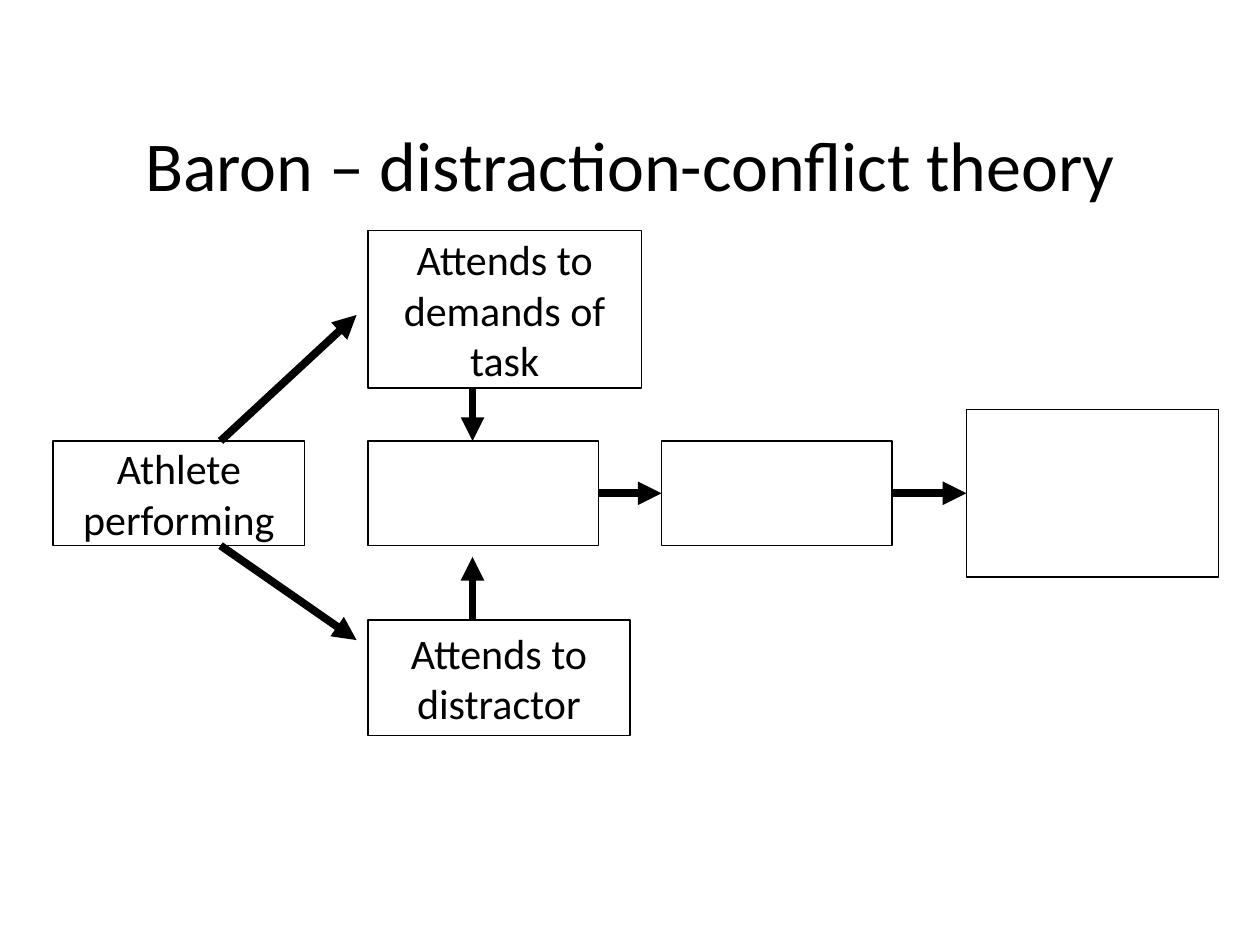
from dataclasses import dataclass

from lxml.etree import SubElement
from pptx import Presentation
from pptx.dml.color import RGBColor
from pptx.enum.shapes import MSO_CONNECTOR, MSO_SHAPE
from pptx.enum.text import MSO_ANCHOR, PP_ALIGN
from pptx.oxml.ns import qn
from pptx.util import Inches, Pt


@dataclass(frozen=True)
class Theme:
    font: str = "Calibri"
    ink: RGBColor = RGBColor(0, 0, 0)
    paper: RGBColor = RGBColor(255, 255, 255)
    title: int = 40
    body: int = 24
    outline: float = 0.75
    arrow: float = 4.5


THEME = Theme()
TOP, LEFT, BOTTOM, RIGHT = range(4)

# name: (left, top, width, height, text), relative to the diagram
BOXES = {
    "outcome": (7.25, 1.42, 2, 1.33, ""),
    "effect": (4.83, 1.67, 1.83, 0.83, ""),
    "conflict": (2.5, 1.67, 1.83, 0.83, ""),
    "athlete": (0, 1.67, 2, 0.83, "Athlete performing"),
    "task": (2.5, 0, 2.17, 1.25, "Attends to demands of task"),
    "distractor": (2.5, 3.09, 2.08, 0.92, "Attends to distractor"),
}
# Arrows that do not meet the middle of a side: x1, y1, x2, y2
FREE_ARROWS = [
    (1.33, 1.67, 2.41, 0.67),
    (3.33, 1.25, 3.33, 1.67),
    (1.33, 2.5, 2.41, 3.25),
    (3.33, 3.09, 3.33, 2.59),
]
FLOW = ["conflict", "effect", "outcome"]


def write(tf, text, size):
    tf.text = text
    tf.word_wrap = True
    tf.vertical_anchor = MSO_ANCHOR.MIDDLE
    p = tf.paragraphs[0]
    p.alignment = PP_ALIGN.CENTER
    for r in p.runs:
        r.font.name = THEME.font
        r.font.size = Pt(size)
        r.font.color.rgb = THEME.ink


def add_title(s, left, top, width, height):
    title = s.shapes.title
    title.left, title.top = Inches(left), Inches(top)
    title.width, title.height = Inches(width), Inches(height)
    write(title.text_frame, "Baron – distraction-conflict theory", THEME.title)


def add_box(s, left, top, width, height, text):
    sp = s.shapes.add_shape(MSO_SHAPE.RECTANGLE, Inches(left), Inches(top),
                            Inches(width), Inches(height))
    sp.shadow.inherit = False
    sp.line.color.rgb = THEME.ink
    sp.line.width = Pt(THEME.outline)
    if text:
        sp.fill.background()
        write(sp.text_frame, text, THEME.body)
    else:
        sp.fill.solid()
        sp.fill.fore_color.rgb = THEME.paper
    return sp


def add_arrow(s, x1=0, y1=0, x2=0, y2=0):
    line = s.shapes.add_connector(MSO_CONNECTOR.STRAIGHT, Inches(x1), Inches(y1),
                                  Inches(x2), Inches(y2))
    line.line.color.rgb = THEME.ink
    line.line.width = Pt(THEME.arrow)
    SubElement(line.line._get_or_add_ln(), qn("a:tailEnd"), type="triangle")
    SubElement(line._element.spPr, qn("a:effectLst"))
    return line


def add_diagram(s, left, top):
    # Boxes
    boxes = {name: add_box(s, left + x, top + y, w, h, text)
             for name, (x, y, w, h, text) in BOXES.items()}
    # Arrows around the athlete's two demands
    for x1, y1, x2, y2 in FREE_ARROWS:
        add_arrow(s, left + x1, top + y1, left + x2, top + y2)
    # Left-to-right chain
    for start, end in zip(FLOW, FLOW[1:]):
        arrow = add_arrow(s)
        arrow.begin_connect(boxes[start], RIGHT)
        arrow.end_connect(boxes[end], LEFT)


def main():
    prs = Presentation()
    prs.slide_width, prs.slide_height = Inches(10), Inches(7.5)
    s = prs.slides.add_slide(prs.slide_layouts[5])
    add_title(s, 0, 0.67, 10, 1.25)
    add_diagram(s, 0.42, 1.83)
    prs.save("out.pptx")


if __name__ == "__main__":
    main()
